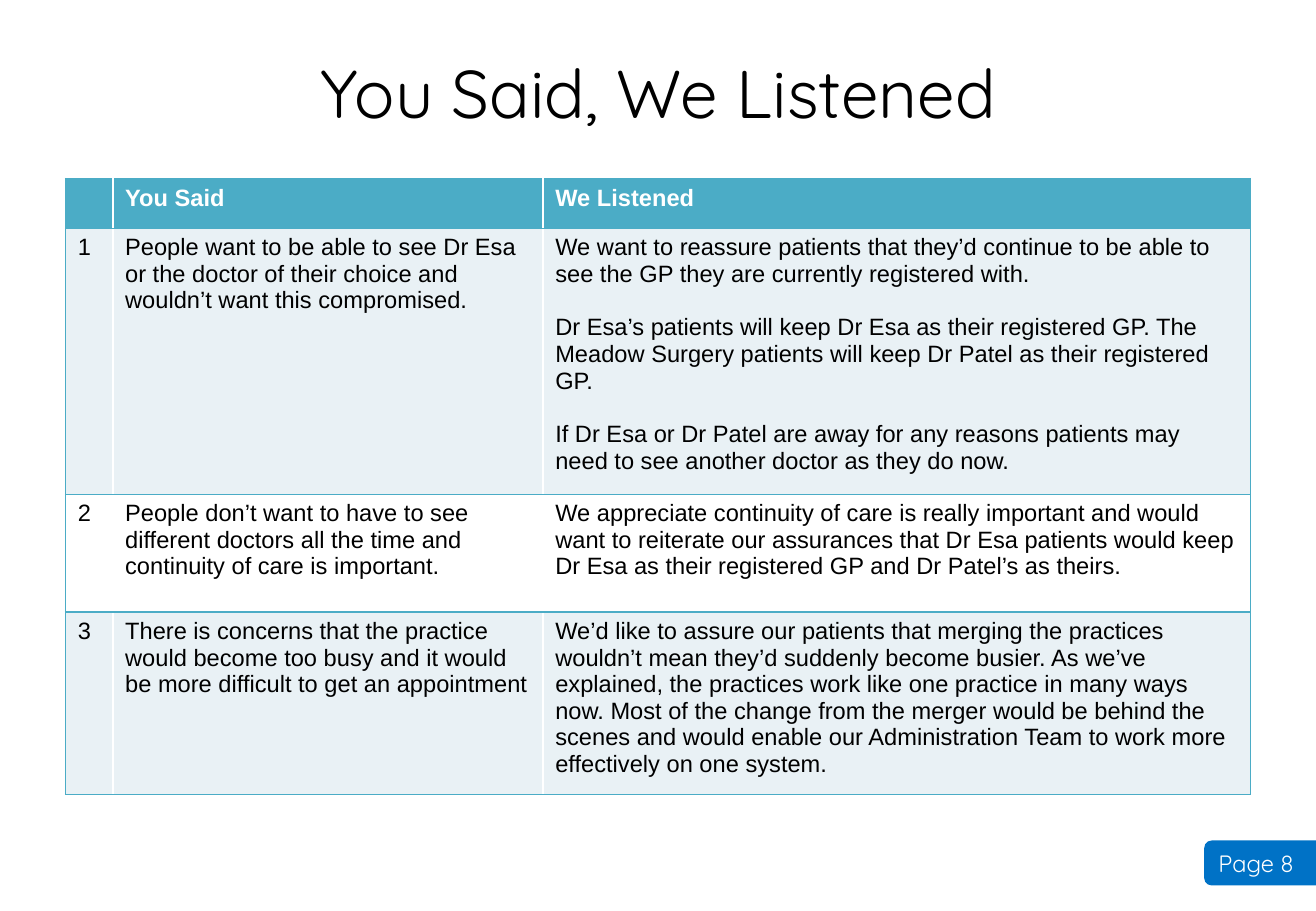
from pptx import Presentation
from pptx.dml.color import RGBColor
from pptx.enum.shapes import MSO_SHAPE as Shape
from pptx.enum.text import MSO_ANCHOR as Anchor, PP_ALIGN as Align
from pptx.oxml.ns import qn
from pptx.util import Inches, Pt
from lxml.etree import SubElement

# Content
TITLE = "You Said, We Listened"
PAGE_LABEL = "Page 8"
HEADINGS = ["", "You Said", "We Listened"]
FEEDBACK = [
    ("People want to be able to see Dr Esa or the doctor of their choice and "
     "wouldn’t want this compromised.",
     ["We want to reassure patients that they’d continue to be able to see the GP "
      "they are currently registered with.",
      "Dr Esa’s patients will keep Dr Esa as their registered GP. The Meadow Surgery "
      "patients will keep Dr Patel as their registered GP.",
      "If Dr Esa or Dr Patel are away for any reasons patients may need to see "
      "another doctor as they do now."]),
    ("People don’t want to have to see different doctors all the time and "
     "continuity of care is important.",
     ["We appreciate continuity of care is really important and would want to "
      "reiterate our assurances that Dr Esa patients would keep Dr Esa as their "
      "registered GP and Dr Patel’s as theirs."]),
    ("There is concerns that the practice would become too busy and it would be "
     "more difficult to get an appointment",
     ["We’d like to assure our patients that merging the practices wouldn’t mean "
      "they’d suddenly become busier. As we’ve explained, the practices work like "
      "one practice in many ways now. Most of the change from the merger would be "
      "behind the scenes and would enable our Administration Team to work more "
      "effectively on one system."]),
]

# Style and layout
TEAL, PALE, WHITE, BLACK, BLUE = "4BACC6", "E9F1F5", "FFFFFF", "000000", "0072C6"
BODY_FONT, DISPLAY_FONT = "Arial", "Quicksand"
LEFT, WIDTH = 0.54, 9.75
COLUMN_WIDTHS = [0.39, 3.54, 5.82]
ROW_HEIGHTS = [0.41, 2.19, 0.97, 1.42]
PARAGRAPH_GAP = 16


def rgb(code):
    return RGBColor.from_string(code)


def write(frame, paragraphs, size, font, color, bold=False, align=Align.LEFT):
    for i, text in enumerate(paragraphs):
        paragraph = frame.add_paragraph() if i else frame.paragraphs[0]
        paragraph.alignment = align
        if i:
            paragraph.space_before = Pt(PARAGRAPH_GAP)
        run = paragraph.add_run()
        run.text = text
        run.font.size, run.font.name, run.font.bold = Pt(size), font, bold
        run.font.color.rgb = rgb(color)


def set_borders(cell, sides):
    properties = cell._tc.get_or_add_tcPr()
    for position, side in enumerate(sides):
        line = SubElement(properties, qn(f"a:ln{side}"), w=str(Pt(1)))
        solid = SubElement(line, qn("a:solidFill"))
        SubElement(solid, qn("a:srgbClr"), val=TEAL)
        # Borders come before the cell fill
        properties.insert(position, line)


deck = Presentation()
deck.slide_width, deck.slide_height = Inches(10.83), Inches(7.5)
slide = deck.slides.add_slide(deck.slide_layouts[6])

# Title
title = slide.shapes.add_textbox(
    Inches(LEFT), Inches(0.13), Inches(WIDTH), Inches(1.25)).text_frame
title.word_wrap = True
title.vertical_anchor = Anchor.MIDDLE
write(title, [TITLE], 40, DISPLAY_FONT, BLACK, align=Align.CENTER)

# Feedback table
rows = [[[heading] for heading in HEADINGS]]
rows += [[[str(number)], [said], listened]
         for number, (said, listened) in enumerate(FEEDBACK, 1)]
table = slide.shapes.add_table(
    len(rows), len(HEADINGS), Inches(LEFT), Inches(1.47),
    Inches(WIDTH), Inches(sum(ROW_HEIGHTS))).table
for column, width in zip(table.columns, COLUMN_WIDTHS):
    column.width = Inches(width)
for row, height in zip(table.rows, ROW_HEIGHTS):
    row.height = Inches(height)

for r, row in enumerate(rows):
    is_header = r == 0
    row_fill = TEAL if is_header else PALE if r % 2 else WHITE
    for c, paragraphs in enumerate(row):
        cell = table.cell(r, c)
        cell.fill.solid()
        cell.fill.fore_color.rgb = rgb(row_fill)
        write(cell.text_frame, paragraphs, 14, BODY_FONT,
              WHITE if is_header else BLACK, bold=is_header)
        outer = {0: ["L"], len(row) - 1: ["R"]}.get(c, [])
        set_borders(cell, outer + ["T", "B"])

# Page tab, running past the right edge
tab = slide.shapes.add_shape(
    Shape.ROUNDED_RECTANGLE, Inches(9.91), Inches(6.92), Inches(1.89), Inches(0.37))
tab.shadow.inherit = False
tab.fill.solid()
tab.fill.fore_color.rgb = rgb(BLUE)
tab.line.fill.background()
tab.text_frame.vertical_anchor = Anchor.MIDDLE
write(tab.text_frame, [PAGE_LABEL], 14, DISPLAY_FONT, WHITE)

deck.save("out.pptx")
